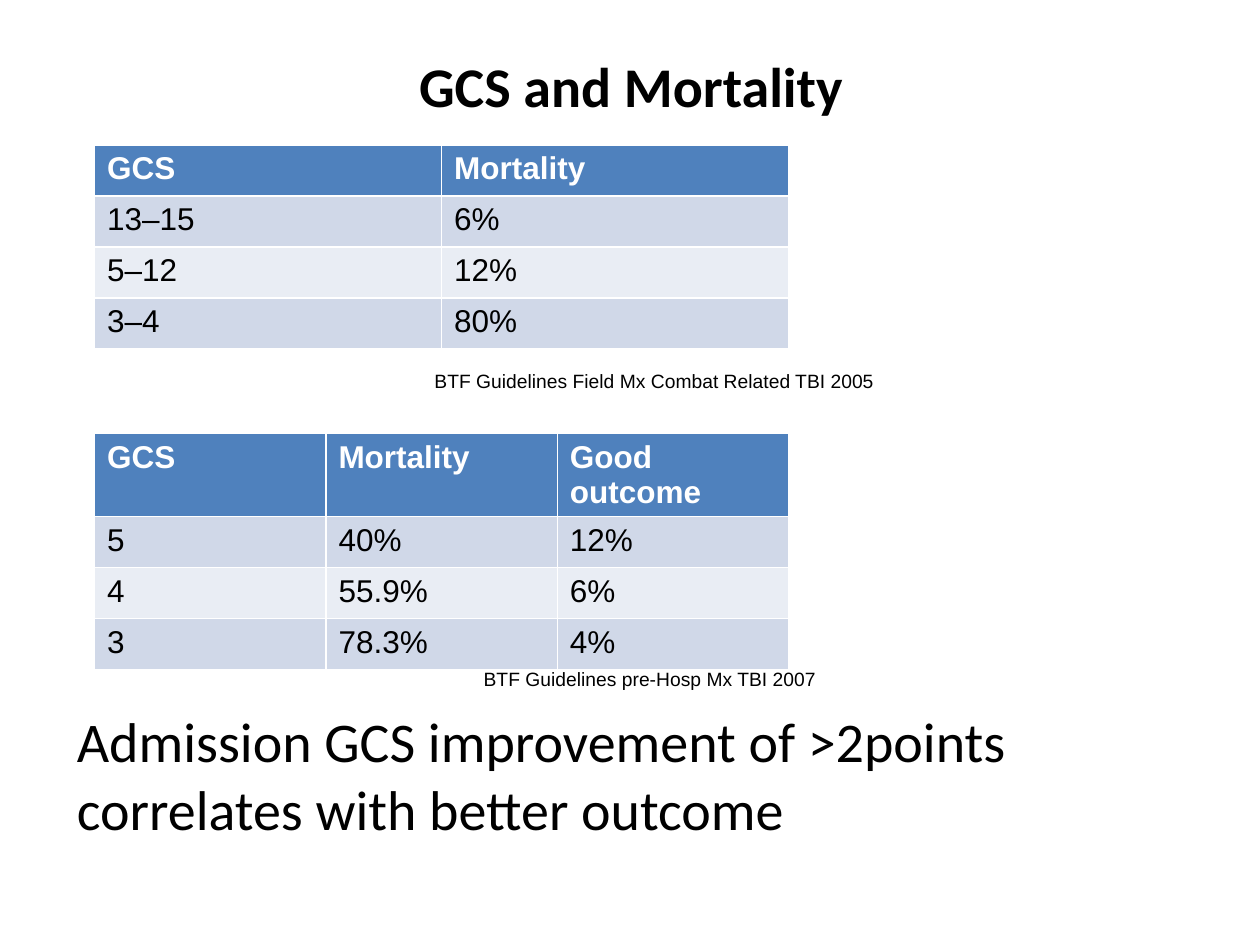
from lxml import etree
from pptx import Presentation
from pptx.dml.color import RGBColor
from pptx.enum.text import MSO_ANCHOR, PP_ALIGN
from pptx.oxml.ns import qn
from pptx.util import Inches, Pt

CENTER = PP_ALIGN.CENTER
MIDDLE = MSO_ANCHOR.MIDDLE

COLORS = {"text": "000000", "white": "FFFFFF", "head": "4F81BD",
          "odd": "D0D8E8", "even": "E9EDF4"}
HEAD_FONT, BODY_FONT = "Calibri", "Arial"


class Deck:
    """Holds the style and the current slide."""

    def __init__(self, width, height):
        self.prs = Presentation()
        self.prs.slide_width = Inches(width)
        self.prs.slide_height = Inches(height)
        self.slide = self.prs.slides.add_slide(self.prs.slide_layouts[1])

    def place(self, shape, left, top, width, height):
        shape.left, shape.top = Inches(left), Inches(top)
        shape.width, shape.height = Inches(width), Inches(height)

    def style(self, para, size, name, color="text", bold=False):
        font = para.font
        font.size, font.name, font.bold = Pt(size), name, bold
        font.color.rgb = RGBColor.from_string(COLORS[color])

    def title(self, text, *box):
        shape = self.slide.shapes.title
        self.place(shape, *box)
        frame = shape.text_frame
        frame.text = text
        frame.vertical_anchor = MIDDLE
        para = frame.paragraphs[0]
        para.alignment = CENTER
        self.style(para, 32, HEAD_FONT, bold=True)

    def body(self, text, *box):
        shape = self.slide.placeholders[1]
        self.place(shape, *box)
        shape.text_frame.text = text
        para = shape.text_frame.paragraphs[0]
        para.space_before = Pt(0)
        # No bullet and no hanging indent
        props = para._p.get_or_add_pPr()
        props.set("marL", "0")
        props.set("indent", "0")
        etree.SubElement(props, qn("a:buNone"))
        self.style(para, 32, HEAD_FONT)

    def table(self, rows, left, top, width, height):
        grid = self.slide.shapes.add_table(
            len(rows), len(rows[0]), Inches(left), Inches(top),
            Inches(width), Inches(height)).table
        for i, row in enumerate(rows):
            band = "head" if i == 0 else "odd" if i % 2 else "even"
            for j, text in enumerate(row):
                cell = grid.cell(i, j)
                cell.text = text
                cell.fill.solid()
                cell.fill.fore_color.rgb = RGBColor.from_string(COLORS[band])
                self.style(cell.text_frame.paragraphs[0], 18, BODY_FONT,
                           "text" if i else "white", i == 0)

    def source(self, text, *box):
        shape = self.slide.shapes.add_textbox(*map(Inches, box))
        frame = shape.text_frame
        frame.word_wrap = True
        frame.text = text
        self.style(frame.paragraphs[0], 11, BODY_FONT)


def main():
    deck = Deck(10, 7.5)

    # Title and conclusion
    deck.title("GCS and Mortality", 0.51, 0.13, 9, 1.09)
    deck.body("Admission GCS improvement of >2points correlates with "
              "better outcome", 0.51, 5.56, 9, 1.3)

    # Tables
    deck.table([("GCS", "Mortality"), ("13–15", "6%"), ("5–12", "12%"),
                ("3–4", "80%")], 0.75, 1.15, 5.51, 1.62)
    deck.table([("GCS", "Mortality", "Good outcome"), ("5", "40%", "12%"),
                ("4", "55.9%", "6%"), ("3", "78.3%", "4%")],
               0.75, 3.44, 5.51, 1.62)

    # Sources
    deck.source("BTF Guidelines Field Mx Combat Related TBI 2005",
                3.35, 2.88, 3.86, 0.29)
    deck.source("BTF Guidelines pre-Hosp Mx TBI 2007",
                3.74, 5.25, 4.09, 0.29)

    deck.prs.save("out.pptx")


if __name__ == "__main__":
    main()
